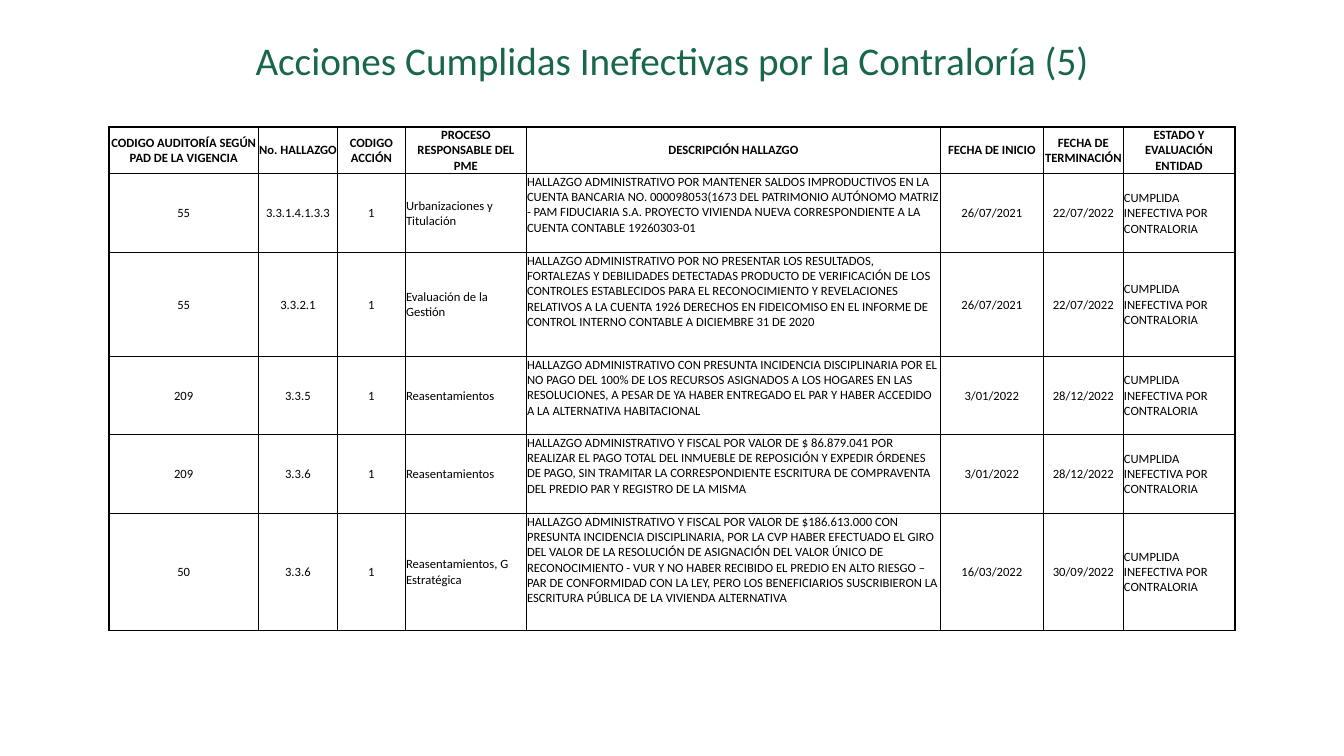
"""Build the slide listing the actions the audit office found ineffective."""
from lxml.etree import SubElement
from pptx import Presentation
from pptx.dml.color import RGBColor
from pptx.enum.text import MSO_ANCHOR as Anchor, PP_ALIGN as Align
from pptx.oxml.ns import qn
from pptx.util import Pt

GREEN = RGBColor(0x17, 0x67, 0x48)
BLACK = RGBColor(0, 0, 0)
FONT = "Calibri"
OUTER_LINE, INNER_LINE = Pt(1.5), Pt(1)

COLUMN_WIDTHS = [106.8, 56.4, 48.6, 86.4, 295.7, 73.6, 57.1, 79.6]
ROW_HEIGHTS = [33.2, 56.4, 74.3, 55.7, 56.4, 83.6]
PROCESS, DESCRIPTION, STATUS = 3, 4, 7
LEFT_ALIGNED = {PROCESS, DESCRIPTION, STATUS}

HEADERS = [
    "CODIGO AUDITORÍA SEGÚN PAD DE LA VIGENCIA", "No. HALLAZGO", "CODIGO ACCIÓN",
    "PROCESO RESPONSABLE DEL PME", "DESCRIPCIÓN HALLAZGO", "FECHA DE INICIO",
    "FECHA DE TERMINACIÓN", "ESTADO Y EVALUACIÓN ENTIDAD",
]
ACTION_CODE = "1"
STATUS_TEXT = "CUMPLIDA INEFECTIVA POR CONTRALORIA"
FINDINGS = [
    ("55", "3.3.1.4.1.3.3", "Urbanizaciones y Titulación",
     "HALLAZGO ADMINISTRATIVO POR MANTENER SALDOS IMPRODUCTIVOS EN LA CUENTA "
     "BANCARIA NO. 000098053(1673 DEL PATRIMONIO AUTÓNOMO MATRIZ - PAM FIDUCIARIA "
     "S.A. PROYECTO VIVIENDA NUEVA CORRESPONDIENTE A LA CUENTA CONTABLE 19260303-01",
     "26/07/2021", "22/07/2022"),
    ("55", "3.3.2.1", "Evaluación de la Gestión",
     "HALLAZGO ADMINISTRATIVO POR NO PRESENTAR LOS RESULTADOS, FORTALEZAS Y "
     "DEBILIDADES DETECTADAS PRODUCTO DE VERIFICACIÓN DE LOS CONTROLES ESTABLECIDOS "
     "PARA EL RECONOCIMIENTO Y REVELACIONES RELATIVOS A LA CUENTA 1926 DERECHOS EN "
     "FIDEICOMISO EN EL INFORME DE CONTROL INTERNO CONTABLE A DICIEMBRE 31 DE 2020",
     "26/07/2021", "22/07/2022"),
    ("209", "3.3.5", "Reasentamientos",
     "HALLAZGO ADMINISTRATIVO CON PRESUNTA INCIDENCIA DISCIPLINARIA POR EL NO PAGO "
     "DEL 100% DE LOS RECURSOS ASIGNADOS A LOS HOGARES EN LAS RESOLUCIONES, A PESAR "
     "DE YA HABER ENTREGADO EL PAR Y HABER ACCEDIDO A LA ALTERNATIVA HABITACIONAL",
     "3/01/2022", "28/12/2022"),
    ("209", "3.3.6", "Reasentamientos",
     "HALLAZGO ADMINISTRATIVO Y FISCAL POR VALOR DE $ 86.879.041 POR REALIZAR EL "
     "PAGO TOTAL DEL INMUEBLE DE REPOSICIÓN Y EXPEDIR ÓRDENES DE PAGO, SIN TRAMITAR "
     "LA CORRESPONDIENTE ESCRITURA DE COMPRAVENTA DEL PREDIO PAR Y REGISTRO DE LA "
     "MISMA",
     "3/01/2022", "28/12/2022"),
    ("50", "3.3.6", "Reasentamientos, G Estratégica",
     "HALLAZGO ADMINISTRATIVO Y FISCAL POR VALOR DE $186.613.000 CON PRESUNTA "
     "INCIDENCIA DISCIPLINARIA, POR LA CVP HABER EFECTUADO EL GIRO DEL VALOR DE LA "
     "RESOLUCIÓN DE ASIGNACIÓN DEL VALOR ÚNICO DE RECONOCIMIENTO - VUR Y NO HABER "
     "RECIBIDO EL PREDIO EN ALTO RIESGO – PAR DE CONFORMIDAD CON LA LEY, PERO LOS "
     "BENEFICIARIOS SUSCRIBIERON LA ESCRITURA PÚBLICA DE LA VIVIENDA ALTERNATIVA",
     "16/03/2022", "30/09/2022"),
]


def format_paragraph(paragraph, size, color, align, bold=False):
    """Set the alignment and font of a paragraph."""
    paragraph.alignment = align
    font = paragraph.font
    font.name, font.size, font.bold = FONT, Pt(size), bold
    font.color.rgb = color


def set_title(slide, text):
    """Place and format the slide title."""
    title = slide.shapes.title
    title.left, title.top, title.width, title.height = Pt(48), Pt(11.5), Pt(864), Pt(62.6)
    frame = title.text_frame
    frame.text = text
    frame.vertical_anchor = Anchor.MIDDLE
    format_paragraph(frame.paragraphs[0], 28, GREEN, Align.CENTER)


def set_borders(cell, row, column):
    """Draw the four borders of a cell, heavier on the table's outline."""
    outer_edges = {
        "a:lnL": column == 0,
        "a:lnR": column == len(COLUMN_WIDTHS) - 1,
        "a:lnT": row == 0,
        "a:lnB": row == len(ROW_HEIGHTS) - 1,
    }
    properties = cell._tc.get_or_add_tcPr()
    for tag, is_outer in outer_edges.items():
        width = OUTER_LINE if is_outer else INNER_LINE
        line = SubElement(properties, qn(tag), w=str(width))
        fill = SubElement(line, qn("a:solidFill"))
        SubElement(fill, qn("a:srgbClr"), val=str(BLACK))


def fill_cell(cell, text, row, column):
    """Write one cell with its borders, margins and alignment."""
    is_header = row == 0
    set_borders(cell, row, column)
    cell.fill.background()
    cell.margin_left = cell.margin_right = cell.margin_top = Pt(0.5)
    cell.margin_bottom = Pt(0)
    is_top = column == DESCRIPTION and not is_header
    cell.vertical_anchor = Anchor.TOP if is_top else Anchor.MIDDLE
    cell.text = text
    is_left = column in LEFT_ALIGNED and not is_header
    align = Align.LEFT if is_left else Align.CENTER
    format_paragraph(cell.text_frame.paragraphs[0], 9, BLACK, align, is_header)


def add_findings_table(slide):
    """Add the table of findings."""
    rows = [HEADERS] + [
        [audit, finding, ACTION_CODE, process, description, start, end, STATUS_TEXT]
        for audit, finding, process, description, start, end in FINDINGS
    ]
    table = slide.shapes.add_table(
        len(rows), len(HEADERS), Pt(77.8), Pt(90.7),
        Pt(sum(COLUMN_WIDTHS)), Pt(sum(ROW_HEIGHTS))).table
    table.first_row = table.horz_banding = False
    for column, width in zip(table.columns, COLUMN_WIDTHS):
        column.width = Pt(width)
    for row, height in zip(table.rows, ROW_HEIGHTS):
        row.height = Pt(height)
    for row_index, texts in enumerate(rows):
        for column_index, text in enumerate(texts):
            cell = table.cell(row_index, column_index)
            fill_cell(cell, text, row_index, column_index)


def main():
    """Build and save the presentation."""
    presentation = Presentation()
    presentation.slide_width, presentation.slide_height = Pt(960), Pt(540)
    slide = presentation.slides.add_slide(presentation.slide_layouts[5])
    set_title(slide, "Acciones Cumplidas Inefectivas por la Contraloría (5)")
    add_findings_table(slide)
    presentation.save("out.pptx")


if __name__ == "__main__":
    main()
